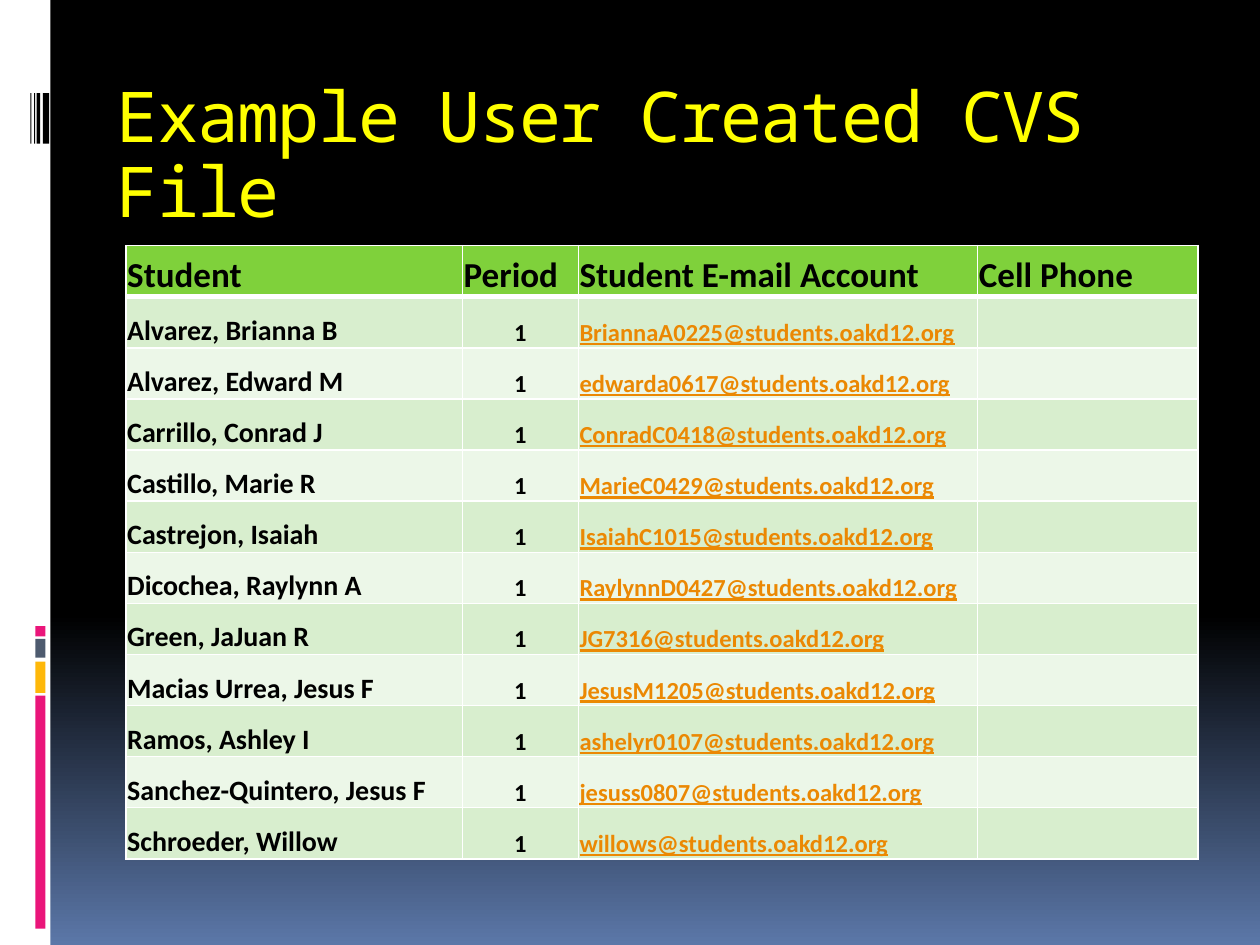
from lxml import etree
from pptx import Presentation
from pptx.dml.color import RGBColor
from pptx.enum.shapes import MSO_SHAPE
from pptx.enum.text import MSO_ANCHOR, PP_ALIGN
from pptx.oxml.ns import qn
from pptx.util import Inches, Pt

RECT = MSO_SHAPE.RECTANGLE
TOP, BOTTOM = MSO_ANCHOR.TOP, MSO_ANCHOR.BOTTOM
LEFT, CENTER = PP_ALIGN.LEFT, PP_ALIGN.CENTER

BLACK = RGBColor(0x00, 0x00, 0x00)
WHITE = RGBColor(0xFF, 0xFF, 0xFF)
BLUE = RGBColor(0x5B, 0x77, 0xA8)
PINK = RGBColor(0xEA, 0x15, 0x7A)
GOLD = RGBColor(0xFE, 0xB8, 0x0A)
SLATE = RGBColor(0x4E, 0x5B, 0x6F)
YELLOW = RGBColor(0xFF, 0xFF, 0x00)
ORANGE = RGBColor(0xEB, 0x88, 0x03)
GREEN = RGBColor(0x7F, 0xD1, 0x3B)
BANDS = RGBColor(0xD8, 0xEE, 0xCE), RGBColor(0xEC, 0xF7, 0xE8)

BARS = [
    (0, 0, 0.4, 7.5, WHITE),
    (0.28, 5.52, 0.08, 1.85, PINK),
    (0.28, 5.25, 0.08, 0.25, GOLD),
    (0.28, 5.07, 0.08, 0.15, SLATE),
    (0.28, 4.97, 0.08, 0.08, PINK),
    (0.34, 0.74, 0.05, 0.4, BLACK),
    (0.29, 0.74, 0.03, 0.4, BLACK),
    (0.27, 0.74, 0.01, 0.4, BLACK),
    (0.24, 0.74, 0.01, 0.4, BLACK),
]
HEADS = ["Student", "Period", "Student E-mail Account", "Cell Phone"]
WIDTHS = [2.67, 0.92, 3.17, 1.75]
HEIGHT = 4.87
DOMAIN = "@students.oakd12.org"
PUPILS = [
    ("Alvarez, Brianna B", "BriannaA0225"),
    ("Alvarez, Edward M", "edwarda0617"),
    ("Carrillo, Conrad J", "ConradC0418"),
    ("Castillo, Marie R", "MarieC0429"),
    ("Castrejon, Isaiah", "IsaiahC1015"),
    ("Dicochea, Raylynn A", "RaylynnD0427"),
    ("Green, JaJuan R", "JG7316"),
    ("Macias Urrea, Jesus F", "JesusM1205"),
    ("Ramos, Ashley I", "ashelyr0107"),
    ("Sanchez-Quintero, Jesus F", "jesuss0807"),
    ("Schroeder, Willow", "willows"),
]
STYLES = [
    dict(size=16),
    dict(size=14, align=CENTER),
    dict(size=14, color=ORANGE, line=True),
    dict(size=14),
]


def write(frame, text, size=20, font="Calibri", color=BLACK, bold=True,
          line=False, align=LEFT, space=None, pitch=None):
    """Put one formatted run of text in a frame."""
    para = frame.paragraphs[0]
    para.alignment = align
    if pitch:
        para.line_spacing = pitch
    run = para.add_run()
    run.text = text
    run.font.size = Pt(size)
    run.font.name = font
    run.font.bold = bold
    run.font.underline = line
    run.font.color.rgb = color
    if space:
        run.font._element.set("spc", str(space * 100))


def paint_back(slide):
    """Fade the background from black to blue."""
    fill = slide.background.fill
    fill.gradient()
    fill.gradient_angle = 270
    for stop, place, color in zip(fill.gradient_stops, (0.65, 1), (BLACK, BLUE)):
        stop.position = place
        stop.color.rgb = color


def add_bar(slide, left, top, width, height, color):
    """Draw one plain bar of the side strip."""
    bar = slide.shapes.add_shape(
        RECT, Inches(left), Inches(top), Inches(width), Inches(height))
    bar.shadow.inherit = False
    bar.fill.solid()
    bar.fill.fore_color.rgb = color
    bar.line.fill.background()


def add_title(slide, text):
    """Write the slide title."""
    box = slide.shapes.add_textbox(Inches(0.83), Inches(0.56), Inches(8.83), Inches(1))
    frame = box.text_frame
    frame.word_wrap = True
    frame.vertical_anchor = TOP
    frame.margin_top = Inches(0.09)
    write(frame, text, size=40, font="Noto Sans Mono", color=YELLOW,
          bold=False, space=-1, pitch=0.9)


def add_edges(cell, top, bottom):
    """Rule a cell in white with the given top and bottom widths."""
    props = cell._tc.get_or_add_tcPr()
    edges = dict(lnL=1, lnR=1, lnT=top, lnB=bottom)
    for spot, (tag, width) in enumerate(edges.items()):
        edge = etree.Element(qn("a:" + tag), w=str(Pt(width)))
        fill = etree.SubElement(edge, qn("a:solidFill"))
        etree.SubElement(fill, qn("a:srgbClr"), val=str(WHITE))
        props.insert(spot, edge)


def fill_cell(cell, text, shade, top=1, bottom=1, **style):
    """Set the fill, edges and text of a cell."""
    cell.fill.solid()
    cell.fill.fore_color.rgb = shade
    cell.vertical_anchor = BOTTOM
    cell.margin_left = cell.margin_right = cell.margin_top = Inches(0.01)
    cell.margin_bottom = 0
    add_edges(cell, top, bottom)
    if text:
        write(cell.text_frame, text, **style)


def add_roster(slide):
    """Build the table of students."""
    count = len(PUPILS) + 1
    table = slide.shapes.add_table(
        count, len(HEADS), Inches(1), Inches(1.95),
        Inches(sum(WIDTHS)), Inches(HEIGHT)).table
    for col, width in zip(table.columns, WIDTHS):
        col.width = Inches(width)
    for row in table.rows:
        row.height = Inches(HEIGHT / count)
    for col, head in enumerate(HEADS):
        fill_cell(table.cell(0, col), head, GREEN, bottom=3)
    for row, (name, user) in enumerate(PUPILS, 1):
        texts = name, "1", user + DOMAIN, ""
        for col, (text, style) in enumerate(zip(texts, STYLES)):
            fill_cell(table.cell(row, col), text, BANDS[(row - 1) % 2],
                      top=3 if row == 1 else 1, **style)


def main():
    """Build and save the slide."""
    deck = Presentation()
    deck.slide_width, deck.slide_height = Inches(10), Inches(7.5)
    slide = deck.slides.add_slide(deck.slide_layouts[6])
    paint_back(slide)
    for bar in BARS:
        add_bar(slide, *bar)
    add_title(slide, "Example User Created CVS File")
    add_roster(slide)
    deck.save("out.pptx")


if __name__ == "__main__":
    main()
